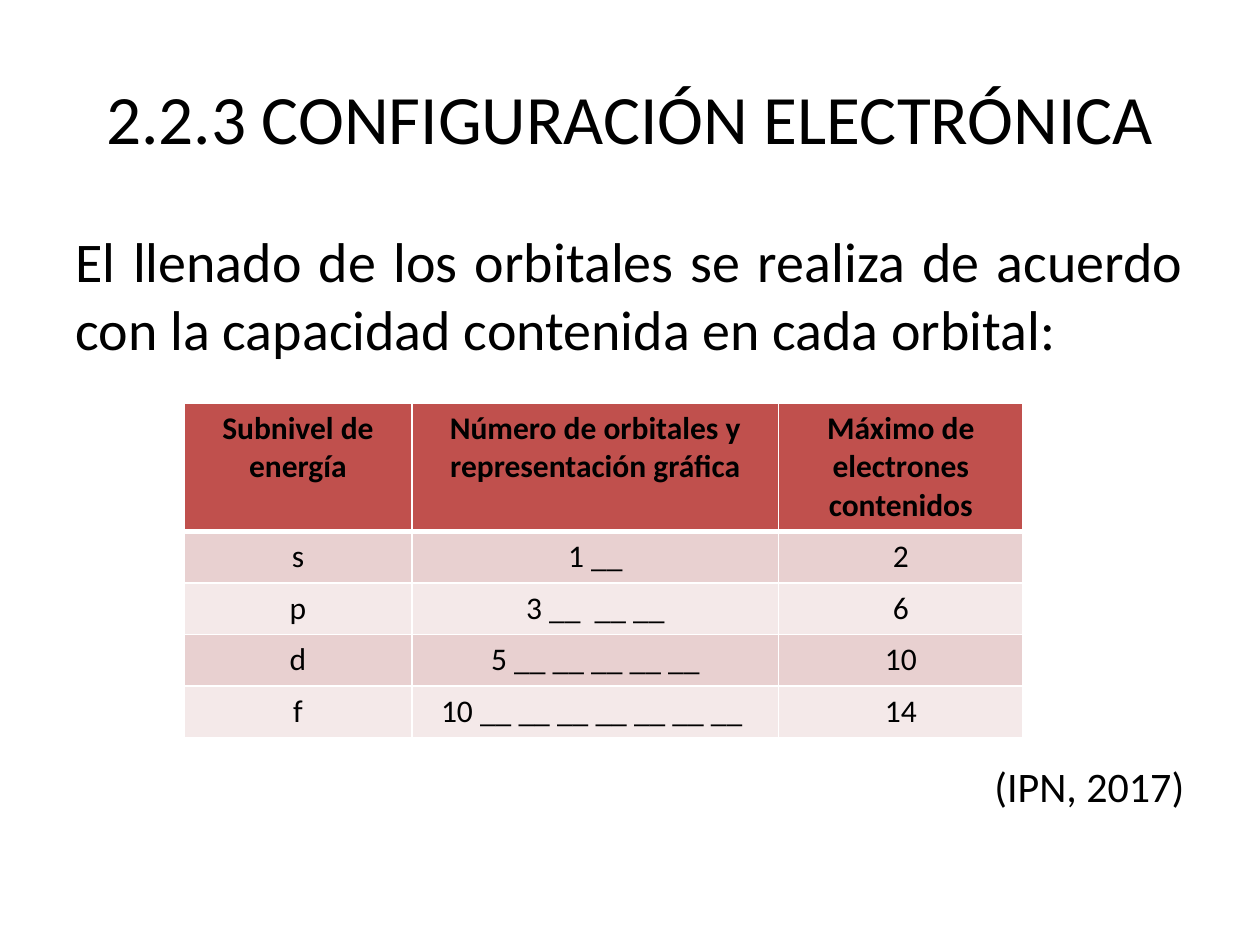
from lxml.etree import SubElement
from pptx import Presentation
from pptx.dml.color import RGBColor
from pptx.enum.text import MSO_ANCHOR, MSO_AUTO_SIZE, PP_ALIGN
from pptx.oxml.ns import qn
from pptx.util import Inches, Pt

COLORS = {
    "text": "000000",
    "border": "FFFFFF",
    "header": "C0504D",
    "band_dark": "E8D0D0",
    "band_light": "F4E9E9",
}
ROWS = [
    ("Subnivel de energía", "Número de orbitales y representación gráfica",
     "Máximo de electrones contenidos"),
    ("s", "1 __", "2"),
    ("p", "3 __  __ __", "6"),
    ("d", "5 __ __ __ __ __", "10"),
    ("f", "10 __ __ __ __ __ __ __ ", "14"),
]
COLUMN_WIDTHS = [1.81, 2.91, 1.94]
HEADER_HEIGHT, ROW_HEIGHT = 1.01, 0.41


def rgb(name):
    return RGBColor.from_string(COLORS[name])


class SlideBuilder:
    font = "Calibri"

    def __init__(self, s):
        self.s = s

    def add_text(self, p, text, size, align, bold=False):
        p.alignment = align
        r = p.add_run()
        r.text = text
        r.font.name = self.font
        r.font.size = Pt(size)
        r.font.bold = bold
        r.font.color.rgb = rgb("text")

    def place(self, sp, left, top, width, height):
        sp.left, sp.top = Inches(left), Inches(top)
        sp.width, sp.height = Inches(width), Inches(height)
        tf = sp.text_frame
        tf.word_wrap = True
        tf.auto_size = MSO_AUTO_SIZE.NONE
        return tf

    def title(self, text):
        tf = self.place(self.s.shapes.title, 0.5, 0.3, 9, 1.25)
        tf.vertical_anchor = MSO_ANCHOR.MIDDLE
        self.add_text(tf.paragraphs[0], text, 39.6, PP_ALIGN.CENTER)

    def body(self, items):
        """Fill the body with (text, size, alignment, space before) items."""
        tf = self.place(self.s.placeholders[1], 0.5, 1.75, 9, 4.95)
        for i, (text, size, align, before) in enumerate(items):
            p = tf.add_paragraph() if i else tf.paragraphs[0]
            pPr = p._p.get_or_add_pPr()
            pPr.set("marL", "0")
            pPr.set("indent", "0")
            SubElement(pPr, qn("a:buNone"))
            p.space_before = Pt(before)
            self.add_text(p, text, size, align)

    def borders(self, cell, widths):
        """Draw the cell edges; widths maps L, R, T, B to points."""
        tcPr = cell._tc.get_or_add_tcPr()
        for side, width in widths.items():
            ln = SubElement(tcPr, qn(f"a:ln{side}"), w=str(Pt(width)))
            fill = SubElement(ln, qn("a:solidFill"))
            SubElement(fill, qn("a:srgbClr"), val=COLORS["border"])

    def table(self, rows, left, top):
        height = HEADER_HEIGHT + ROW_HEIGHT * (len(rows) - 1)
        table = self.s.shapes.add_table(
            len(rows), len(COLUMN_WIDTHS), Inches(left), Inches(top),
            Inches(sum(COLUMN_WIDTHS)), Inches(height)).table
        for column, width in zip(table.columns, COLUMN_WIDTHS):
            column.width = Inches(width)
        for i, row in enumerate(rows):
            table.rows[i].height = Inches(ROW_HEIGHT if i else HEADER_HEIGHT)
            band = "band_dark" if i % 2 else "band_light"
            for j, text in enumerate(row):
                cell = table.cell(i, j)
                self.borders(cell, {"L": 1, "R": 1, "T": 3 if i == 1 else 1,
                                    "B": 1 if i else 3})
                cell.fill.solid()
                cell.fill.fore_color.rgb = rgb(band if i else "header")
                self.add_text(cell.text_frame.paragraphs[0], text, 18,
                              PP_ALIGN.CENTER, bold=i == 0)


def main():
    prs = Presentation()
    prs.slide_width, prs.slide_height = Inches(10), Inches(7.5)
    slide = SlideBuilder(prs.slides.add_slide(prs.slide_layouts[1]))
    slide.title("2.2.3 CONFIGURACIÓN ELECTRÓNICA")
    slide.body([
        ("El llenado de los orbitales se realiza de acuerdo con la capacidad "
         "contenida en cada orbital:", 32, PP_ALIGN.JUSTIFY, 0),
        ("(IPN, 2017)", 24, PP_ALIGN.RIGHT, 228),
    ])
    slide.table(ROWS, 1.46, 3.2)
    prs.save("out.pptx")


if __name__ == "__main__":
    main()
